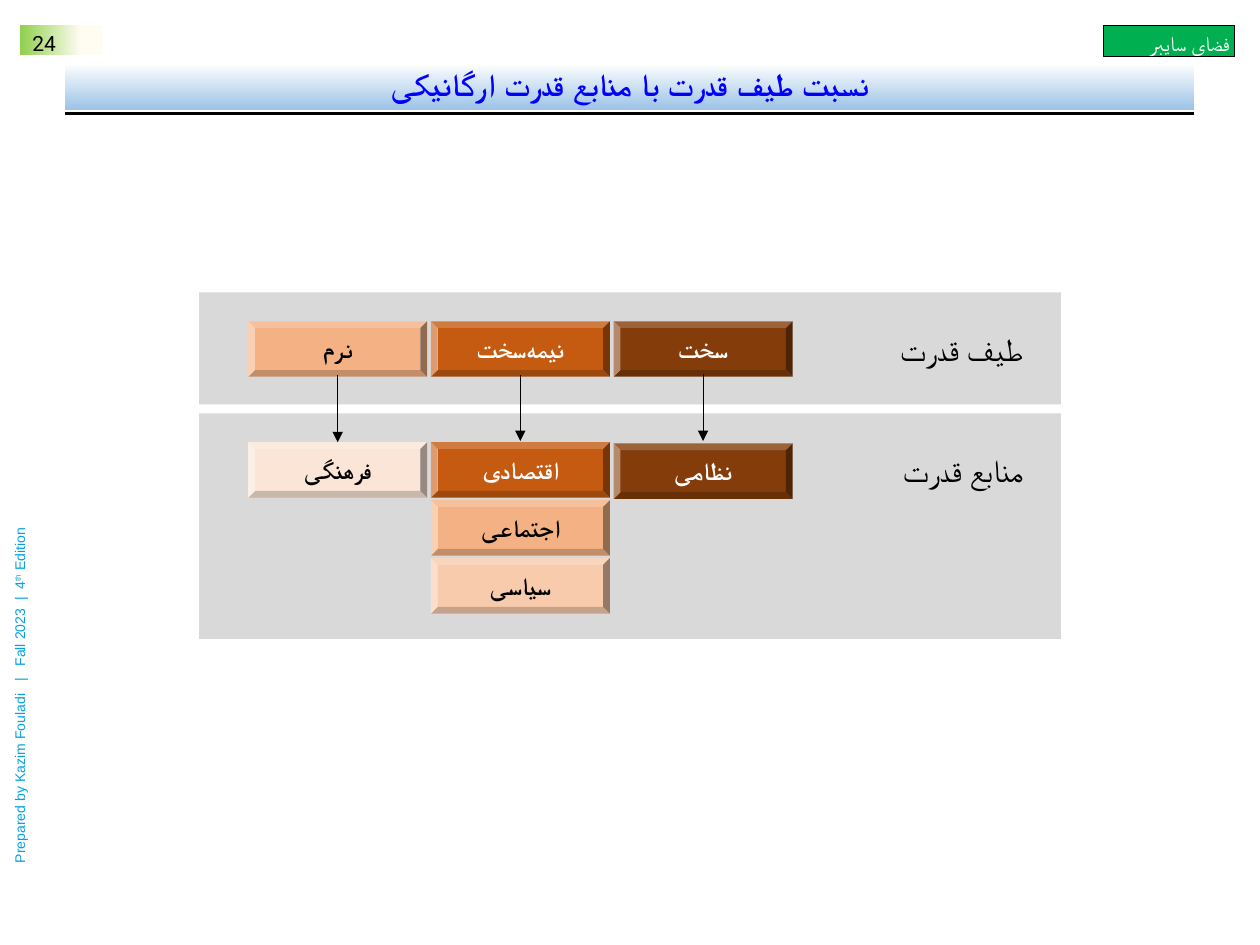
from dataclasses import dataclass

from lxml.etree import SubElement
from pptx import Presentation
from pptx.dml.color import RGBColor
from pptx.enum.shapes import MSO_CONNECTOR as Connector, MSO_SHAPE as Preset
from pptx.enum.text import MSO_ANCHOR as Anchor, PP_ALIGN as Align
from pptx.oxml.ns import qn
from pptx.util import Inches, Pt


@dataclass(frozen=True)
class Theme:
    black: str = "000000"
    white: str = "FFFFFF"
    title: str = "0000FF"
    sky: str = "9DC3E6"
    cream: str = "FFFCF2"
    lime: str = "92D050"
    green: str = "00B050"
    credit: str = "04A1E3"
    panel: str = "D9D9D9"
    brown: str = "843C0B"
    rust: str = "C55A11"
    peach: str = "F4B183"
    light_peach: str = "F8CBAD"
    pale_peach: str = "FBE5D6"
    heading_size: int = 18
    tile_size: int = 14
    badge_size: int = 12
    credit_size: int = 8
    body_font: str = "Calibri"
    badge_font: str = "Arial"
    number_font: str = "Roboto"


@dataclass(frozen=True)
class Area:
    left: float
    top: float
    width: float
    height: float


@dataclass(frozen=True)
class Style:
    font: str
    size: int
    color: str
    bold: bool = False


@dataclass(frozen=True)
class Tile:
    text: str
    column: int
    top: float
    fill: str
    color: str


@dataclass(frozen=True)
class Band:
    label: str
    top: float
    height: float
    label_top: float


@dataclass(frozen=True)
class Arrow:
    column: int
    start: float
    end: float


THEME = Theme()
NON_JOINER = chr(0x200C)
TILE_WIDTH, TILE_HEIGHT = 1.42, 0.44
COLUMN_LEFT, COLUMN_STEP = 1.97, 1.45
SPECTRUM_TOP, SOURCE_TOP, SOURCE_STEP = 2.55, 3.51, 0.46
SOFT, SEMI_HARD, HARD = range(3)

BANDS = [
    Band("طیف قدرت", 2.32, 0.89, 2.57),
    Band("منابع قدرت", 3.28, 1.79, 3.53),
]
TILES = [
    Tile("سخت", HARD, SPECTRUM_TOP, THEME.brown, THEME.white),
    Tile(NON_JOINER.join(["نیمه", "سخت"]), SEMI_HARD, SPECTRUM_TOP, THEME.rust, THEME.white),
    Tile("نرم", SOFT, SPECTRUM_TOP, THEME.peach, THEME.black),
    Tile("نظامی", HARD, SOURCE_TOP + 0.01, THEME.brown, THEME.white),
    Tile("اقتصادی", SEMI_HARD, SOURCE_TOP, THEME.rust, THEME.white),
    Tile("اجتماعی", SEMI_HARD, SOURCE_TOP + SOURCE_STEP, THEME.peach, THEME.black),
    Tile("سیاسی", SEMI_HARD, SOURCE_TOP + 2 * SOURCE_STEP, THEME.light_peach, THEME.black),
    Tile("فرهنگی", SOFT, SOURCE_TOP, THEME.pale_peach, THEME.black),
]
ARROWS = [Arrow(HARD, 2.97, 3.5), Arrow(SEMI_HARD, 2.98, 3.5), Arrow(SOFT, 2.98, 3.51)]


def column_left(column: int) -> float:
    return COLUMN_LEFT + column * COLUMN_STEP


def bounds(area: Area) -> list:
    return [Inches(value) for value in (area.left, area.top, area.width, area.height)]


def add_box(page, area: Area, fill: str | None = None, preset=Preset.RECTANGLE):
    box = page.shapes.add_shape(preset, *bounds(area))
    box.shadow.inherit = False
    box.line.fill.background()
    if fill:
        box.fill.solid()
        box.fill.fore_color.rgb = RGBColor.from_string(fill)
    return box


def add_gradient_box(page, area: Area, stops: list[tuple[float, str]], angle: int):
    box = add_box(page, area)
    box.fill.gradient()
    box.fill.gradient_angle = angle
    for stop, (position, color) in zip(box.fill.gradient_stops, stops):
        stop.position = position
        stop.color.rgb = RGBColor.from_string(color)
    return box


def add_span(para, text: str, style: Style):
    span = para.add_run()
    span.text = text
    span.font.name = style.font
    span.font.size = Pt(style.size)
    span.font.bold = style.bold
    span.font.color.rgb = RGBColor.from_string(style.color)
    return span


def write(box, text: str, style: Style, align=Align.LEFT, anchor=Anchor.TOP,
          insets=(0.1, 0.05, 0.1, 0.05), rtl: bool = False):
    frame = box.text_frame
    frame.word_wrap = True
    frame.vertical_anchor = anchor
    frame.margin_left, frame.margin_top, frame.margin_right, frame.margin_bottom = map(Inches, insets)
    para = frame.paragraphs[0]
    para.alignment = align
    if rtl:
        para._p.get_or_add_pPr().set("rtl", "1")
    add_span(para, text, style)
    return para


def add_line(page, start: tuple[float, float], end: tuple[float, float], width: float, arrow: bool = False):
    line = page.shapes.add_connector(Connector.STRAIGHT, *map(Inches, start + end))
    line.line.color.rgb = RGBColor.from_string(THEME.black)
    line.line.width = Pt(width)
    if arrow:
        SubElement(line.line._get_or_add_ln(), qn("a:tailEnd"), type="triangle")
    SubElement(line._element.spPr, qn("a:effectLst"))


def add_frame(page) -> None:
    add_line(page, (0.52, 0.9), (9.48, 0.9), 1.5)

    number = add_gradient_box(page, Area(0.16, 0.2, 0.66, 0.24),
                              [(0.27, THEME.cream), (0.99, THEME.lime)], 180)
    write(number, "24", Style(THEME.number_font, THEME.badge_size, THEME.black),
          insets=(0.1, 0.04, 0.1, 0))

    badge = add_box(page, Area(8.76, 0.2, 1.04, 0.25), THEME.green)
    badge.line.color.rgb = RGBColor.from_string(THEME.black)
    badge.line.width = Pt(0.5)
    write(badge, " فضای سایبر", Style(THEME.badge_font, THEME.badge_size, THEME.white),
          Align.RIGHT, Anchor.MIDDLE, (0.04, 0.08, 0.04, 0.05))

    credit = page.shapes.add_textbox(*bounds(Area(-1.32, 5.35, 2.96, 0.24)))
    credit.rotation = 270
    credit_style = Style(THEME.badge_font, THEME.credit_size, THEME.credit)
    para = write(credit, "Prepared by Kazim Fouladi   |   Fall 2023  |  4", credit_style)
    ordinal = add_span(para, "th", credit_style)
    ordinal.font._element.set("baseline", "30000")
    add_span(para, " Edition", credit_style)

    title = add_gradient_box(page, Area(0.52, 0.5, 8.96, 0.37),
                             [(0, THEME.white), (1, THEME.sky)], 270)
    para = write(title, "نسبت طیف قدرت با منابع قدرت ارگانیکی",
                 Style(THEME.body_font, THEME.heading_size, THEME.title, True),
                 Align.CENTER, Anchor.MIDDLE, rtl=True)
    para.line_spacing = 0.9


def add_band(page, band: Band) -> None:
    add_box(page, Area(1.58, band.top, 6.84, band.height), THEME.panel)
    label = page.shapes.add_textbox(*bounds(Area(6.8, band.label_top, 1.42, 0.4)))
    write(label, band.label, Style(THEME.body_font, THEME.heading_size, THEME.black), Align.RIGHT)


def add_tile(page, tile: Tile) -> None:
    area = Area(column_left(tile.column), tile.top, TILE_WIDTH, TILE_HEIGHT)
    box = add_box(page, area, tile.fill, Preset.BEVEL)
    box.adjustments[0] = 0.12
    write(box, tile.text, Style(THEME.body_font, THEME.tile_size, tile.color, True),
          Align.CENTER, Anchor.MIDDLE, (0.04,) * 4, rtl=True)


def main() -> None:
    deck = Presentation()
    deck.slide_width, deck.slide_height = Inches(10), Inches(7.5)
    page = deck.slides.add_slide(deck.slide_layouts[6])
    add_frame(page)
    for band in BANDS:
        add_band(page, band)
    for tile in TILES:
        add_tile(page, tile)
    for arrow in ARROWS:
        center = column_left(arrow.column) + TILE_WIDTH / 2
        add_line(page, (center, arrow.start), (center, arrow.end), 0.5, arrow=True)
    deck.save("out.pptx")


if __name__ == "__main__":
    main()
